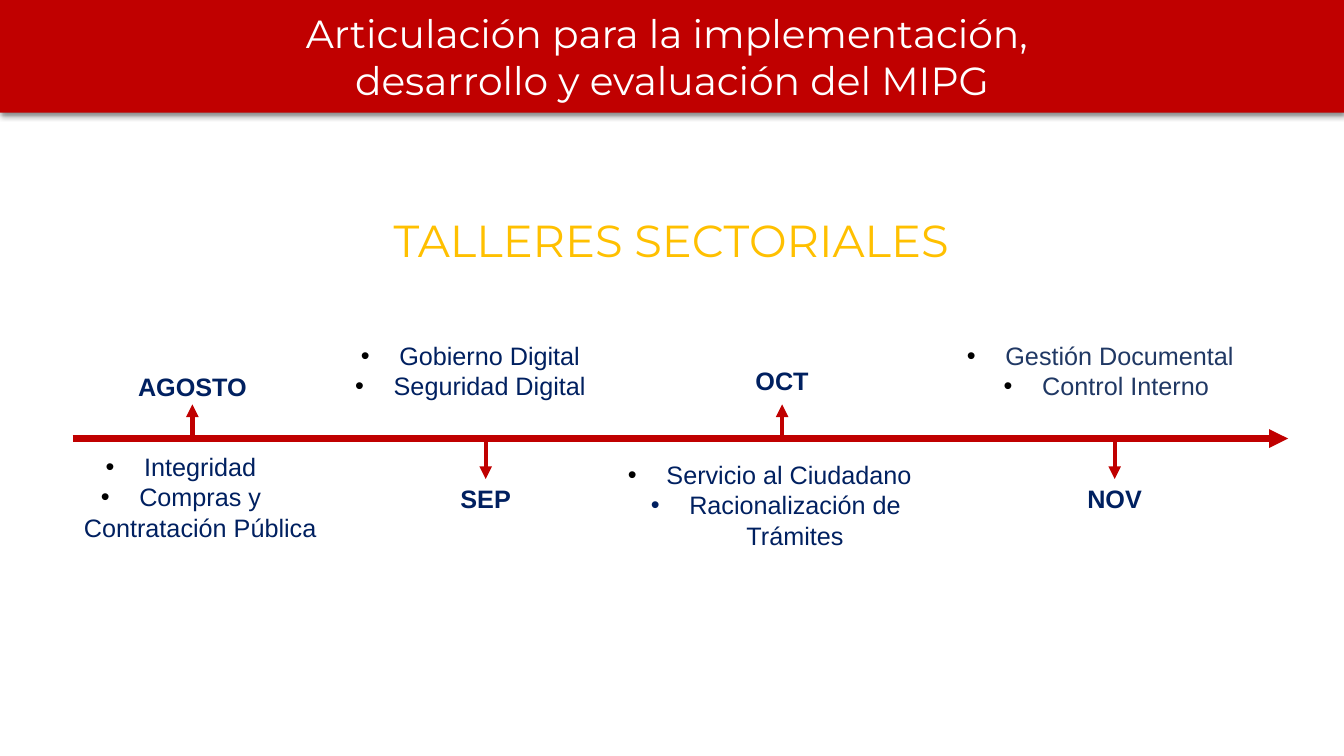
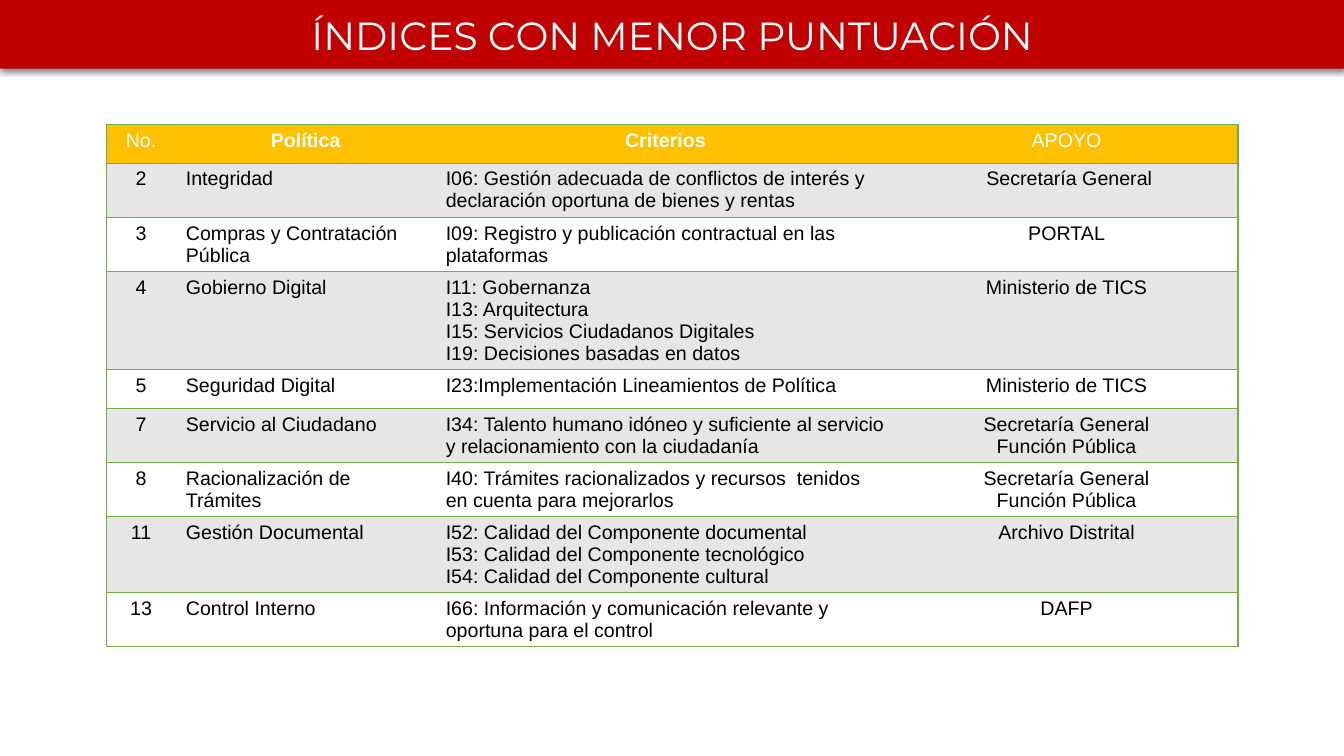
from dataclasses import dataclass

from pptx import Presentation
from pptx.dml.color import RGBColor
from pptx.enum.shapes import MSO_CONNECTOR
from pptx.enum.text import MSO_ANCHOR, MSO_AUTO_SIZE, PP_ALIGN
from pptx.oxml import parse_xml
from pptx.oxml.ns import nsdecls
from pptx.util import Cm, Pt


@dataclass(frozen=True)
class Theme:
    red: str = "C00000"
    gold: str = "FFC000"
    navy: str = "002060"
    slate: str = "203864"
    green: str = "70AD47"
    gray: str = "E7E6E6"
    white: str = "FFFFFF"
    black: str = "000000"
    heading: str = "Montserrat"
    text: str = "Arial"
    title_size: int = 28
    subtitle_size: int = 32
    body_size: int = 18
    table_size: int = 14


THEME = Theme()
WIDTH, HEIGHT = 33.87, 19.05

AGENDA_TITLE = "Articulación para la implementación, \ndesarrollo y evaluación del MIPG"
SUBTITLE = "TALLERES SECTORIALES"
SUBTITLE_AREA = (8.36, 5.23, 17.12, 1.63)
AXIS_START, AXIS_END, AXIS_TOP = 1.83, 32.46, 11.05
LABEL_WIDTH, LABEL_HEIGHT = 4, 1.02
NARROW, WIDE = 0.97, 1.27

MILESTONES = [
    {"month": "AGOSTO", "center": 4.85, "tip": 10.19, "label_top": 9.22,
     "area": (0.84, 11.25, 7.44, 3.33), "color": THEME.navy,
     "topics": [("Integridad", NARROW, THEME.black),
                ("Compras y Contratación Pública", NARROW, THEME.black)]},
    {"month": "SEP", "center": 12.24, "tip": 12.07, "label_top": 12.05,
     "area": (8.64, 8.45, 6.43, 1.8), "color": THEME.navy,
     "topics": [("Gobierno Digital", NARROW, THEME.black),
                ("Seguridad Digital", NARROW, THEME.black)]},
    {"month": "OCT", "center": 19.71, "tip": 10.19, "label_top": 9.07,
     "area": (15.55, 11.45, 7.7, 2.57), "color": THEME.navy,
     "topics": [("Servicio al Ciudadano", NARROW, THEME.black),
                ("Racionalización de Trámites", WIDE, THEME.navy)]},
    {"month": "NOV", "center": 28.09, "tip": 12.07, "label_top": 12.05,
     "area": (23.83, 8.45, 7.8, 1.8), "color": THEME.slate,
     "topics": [("Gestión Documental", NARROW, THEME.black),
                ("Control Interno", WIDE, THEME.black)]},
]

INDEX_TITLE = "ÍNDICES CON MENOR PUNTUACIÓN"
TABLE_LEFT, TABLE_TOP, ROW_HEIGHT = 2.68, 3.14, 0.97
COLUMN_WIDTHS = (1.75, 6.55, 11.58, 8.64)
CENTERED_COLUMNS = (0, 3)
BOLD_HEADERS = (1, 2)
TABLE_ROWS = [
    ("No.", "Política", "Criterios", "APOYO"),
    ("2", "Integridad",
     "I06: Gestión adecuada de conflictos de interés y declaración oportuna de bienes y rentas",
     " Secretaría General"),
    ("3", "Compras y Contratación Pública",
     "I09: Registro y publicación contractual en las plataformas", "PORTAL"),
    ("4", "Gobierno Digital",
     "I11: Gobernanza\nI13: Arquitectura\nI15: Servicios Ciudadanos Digitales\n"
     "I19: Decisiones basadas en datos", "Ministerio de TICS"),
    ("5", "Seguridad Digital", "I23:Implementación Lineamientos de Política",
     "Ministerio de TICS"),
    ("7", "Servicio al Ciudadano",
     "I34: Talento humano idóneo y suficiente al servicio y relacionamiento con la ciudadanía",
     "Secretaría General\nFunción Pública"),
    ("8", "Racionalización de Trámites",
     "I40: Trámites racionalizados y recursos  tenidos en cuenta para mejorarlos",
     "Secretaría General\nFunción Pública"),
    ("11", "Gestión Documental",
     "I52: Calidad del Componente documental\nI53: Calidad del Componente tecnológico\n"
     "I54: Calidad del Componente cultural", "Archivo Distrital"),
    ("13", "Control Interno",
     "I66: Información y comunicación relevante y oportuna para el control", "DAFP"),
]


def xml(body):
    tag, rest = body[1:].split(maxsplit=1)
    return parse_xml(f"<{tag} {nsdecls('a')} {rest}")


def set_all(target, values):
    for name, value in values.items():
        setattr(target, name, value)


def write(frame, text, size, color, font=THEME.text, bold=False, align=PP_ALIGN.CENTER):
    frame.text = text
    for para in frame.paragraphs:
        set_all(para, {"alignment": align, "space_before": Pt(0), "space_after": Pt(0)})
        for span in para.runs:
            set_all(span.font, {"name": font, "size": Pt(size), "bold": bold})
            span.font.color.rgb = RGBColor.from_string(color)


def place(box, area, anchor=MSO_ANCHOR.TOP):
    set_all(box, dict(zip(("left", "top", "width", "height"), map(Cm, area))))
    set_all(box.text_frame, {"word_wrap": True, "auto_size": MSO_AUTO_SIZE.NONE,
                             "vertical_anchor": anchor})


def add_text(page, area, text, size, color, **style):
    box = page.shapes.add_textbox(*map(Cm, area))
    place(box, area)
    write(box.text_frame, text, size, color, **style)


def add_page(deck, layout, title, band_height):
    page = deck.slides.add_slide(deck.slide_layouts.get_by_name(layout))
    band = page.shapes.title
    place(band, (0, 0, WIDTH, band_height), MSO_ANCHOR.MIDDLE)
    write(band.text_frame, title, THEME.title_size, THEME.white, font=THEME.heading)
    band.fill.solid()
    band.fill.fore_color.rgb = RGBColor.from_string(THEME.red)
    band.element.spPr.append(xml(
        f'<a:effectLst ><a:outerShdw blurRad="{Pt(4.5)}" dist="{Pt(1.5)}" dir="5400000">'
        f'<a:srgbClr val="{THEME.black}"><a:alpha val="49000"/></a:srgbClr>'
        '</a:outerShdw></a:effectLst>'))
    return page


def add_arrow(page, start, end, weight):
    arrow = page.shapes.add_connector(MSO_CONNECTOR.STRAIGHT, *map(Cm, start + end))
    arrow.line.color.rgb = RGBColor.from_string(THEME.red)
    arrow.line.width = Pt(weight)
    arrow.get_or_add_ln().append(xml('<a:tailEnd type="triangle"/>'))
    arrow.element.spPr.append(xml("<a:effectLst />"))


def fill_topics(box, milestone):
    topics = milestone["topics"]
    place(box, milestone["area"])
    write(box.text_frame, "\n".join(topic[0] for topic in topics),
          THEME.body_size, milestone["color"])
    for para, (_, indent, bullet_color) in zip(box.text_frame.paragraphs, topics):
        properties = para._p.get_or_add_pPr()
        properties.set("marL", str(Cm(indent)))
        properties.set("indent", str(-Cm(NARROW)))
        for part in (f'<a:buClr ><a:srgbClr val="{bullet_color}"/></a:buClr>',
                     f'<a:buFont typeface="{THEME.text}"/>',
                     '<a:buChar char="•"/>'):
            properties.append(xml(part))


def build_agenda(deck):
    page = add_page(deck, "Comparison", AGENDA_TITLE, 2.84)
    add_text(page, SUBTITLE_AREA, SUBTITLE, THEME.subtitle_size, THEME.gold,
             font=THEME.heading)
    add_arrow(page, (AXIS_START, AXIS_TOP), (AXIS_END, AXIS_TOP), 4.5)
    bodies = [box for box in page.placeholders if box.placeholder_format.idx > 0]
    for body, milestone in zip(bodies, MILESTONES):
        center = milestone["center"]
        add_arrow(page, (center, AXIS_TOP), (center, milestone["tip"]), 3)
        add_text(page, (center - LABEL_WIDTH / 2, milestone["label_top"],
                        LABEL_WIDTH, LABEL_HEIGHT),
                 milestone["month"], THEME.body_size, THEME.navy, bold=True)
        fill_topics(body, milestone)


def set_borders(cell, column):
    visible = {"L": column == 0, "R": column == len(COLUMN_WIDTHS) - 1, "T": True, "B": True}
    properties = cell._tc.get_or_add_tcPr()
    for position, (side, shown) in enumerate(visible.items()):
        paint = (f'<a:solidFill><a:srgbClr val="{THEME.green}"/></a:solidFill>'
                 if shown else "<a:noFill/>")
        properties.insert(position, xml(f'<a:ln{side} w="{Pt(1)}">{paint}</a:ln{side}>'))


def build_index(deck):
    page = add_page(deck, "Title Only", INDEX_TITLE, 1.73)
    area = (TABLE_LEFT, TABLE_TOP, sum(COLUMN_WIDTHS), ROW_HEIGHT * len(TABLE_ROWS))
    table = page.shapes.add_table(len(TABLE_ROWS), len(COLUMN_WIDTHS), *map(Cm, area)).table
    set_all(table, {"first_row": False, "horz_banding": False})
    for column, width in zip(table.columns, COLUMN_WIDTHS):
        column.width = Cm(width)
    for row, texts in enumerate(TABLE_ROWS):
        header = row == 0
        fill = THEME.gold if header else (THEME.white, THEME.gray)[row % 2]
        for column, text in enumerate(texts):
            cell = table.cell(row, column)
            centered = header or column in CENTERED_COLUMNS
            write(cell.text_frame, text, THEME.table_size,
                  THEME.white if header else THEME.black,
                  bold=header and column in BOLD_HEADERS,
                  align=PP_ALIGN.CENTER if centered else PP_ALIGN.LEFT)
            cell.fill.solid()
            cell.fill.fore_color.rgb = RGBColor.from_string(fill)
            set_borders(cell, column)


def main():
    deck = Presentation()
    set_all(deck, {"slide_width": Cm(WIDTH), "slide_height": Cm(HEIGHT)})
    build_agenda(deck)
    build_index(deck)
    deck.save("out.pptx")


if __name__ == "__main__":
    main()
